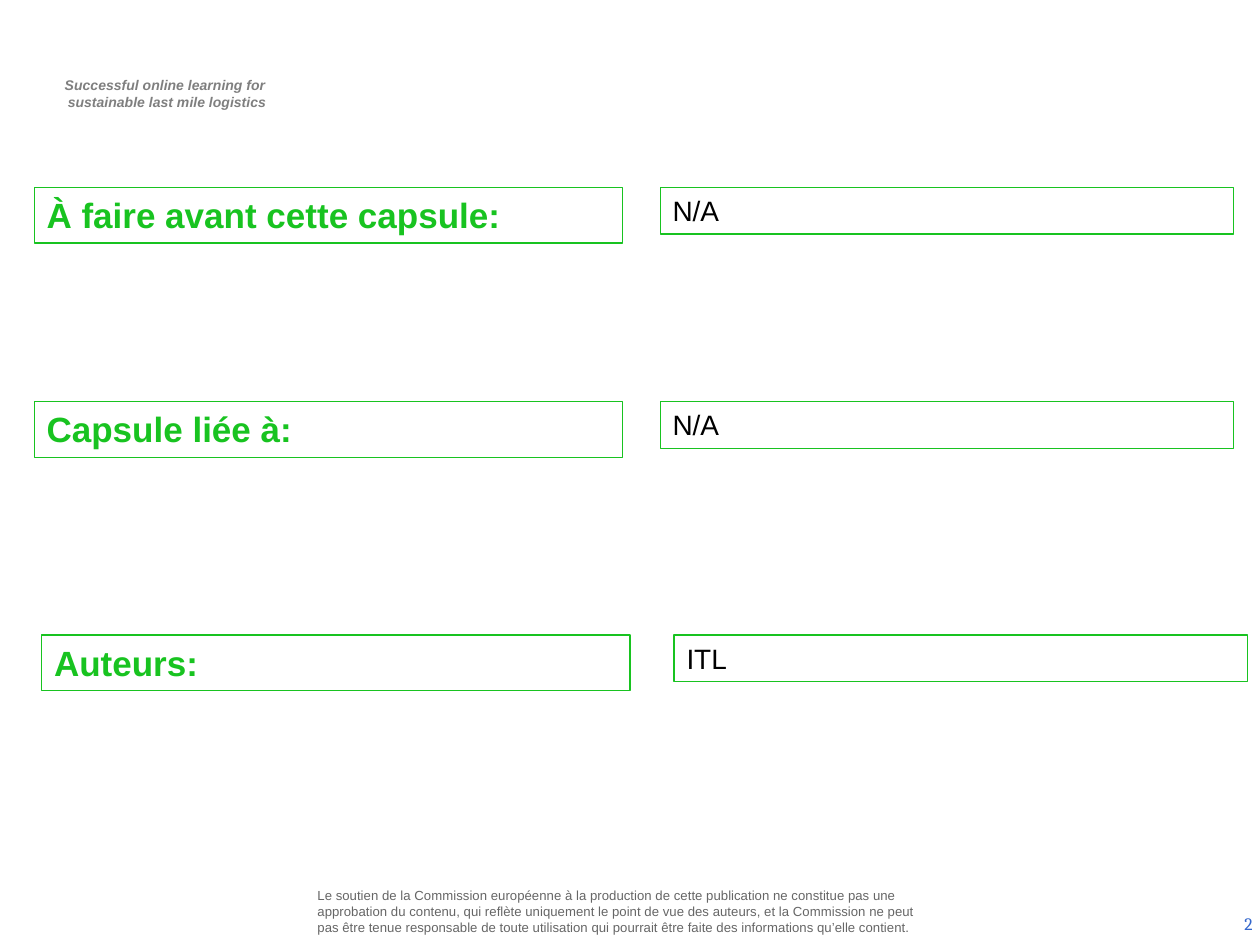
from dataclasses import dataclass

from pptx import Presentation
from pptx.dml.color import RGBColor as Rgb
from pptx.enum.shapes import MSO_SHAPE as Shape
from pptx.enum.text import MSO_ANCHOR as Anchor, MSO_AUTO_SIZE as AutoSize, PP_ALIGN as Align
from pptx.util import Cm, Pt


@dataclass(frozen=True)
class Theme:
    """Colours, fonts and type sizes of the deck."""
    green: str = "18C320"
    white: str = "FFFFFF"
    black: str = "000000"
    slogan_grey: str = "7F7F7F"
    notice_grey: str = "666666"
    number_blue: str = "3366CC"
    sans: str = "Arial"
    serif: str = "Cambria"
    label_size: float = 20
    answer_size: float = 16
    number_size: float = 10
    slogan_size: float = 8
    notice_size: float = 7.5
    border: float = 0.75


THEME = Theme()
SLOGAN = "Successful online learning for \nsustainable last mile logistics"
NOTICE = (
    "Le soutien de la Commission européenne à la production de cette publication "
    "ne constitue pas une approbation du contenu, qui reflète uniquement le point "
    "de vue des auteurs, et la Commission ne peut pas être tenue responsable de "
    "toute utilisation qui pourrait être faite des informations qu’elle contient."
)
ROWS = [
    ("À faire avant cette capsule:", "N/A", (0.69, 3.78, 24.18, 1.12)),
    ("Capsule liée à:", "N/A", (0.69, 8.1, 24.18, 1.12)),
    ("Auteurs:", "ITL", (0.84, 12.8, 24.31, 1.12)),
]
LABEL_WIDTH, ANSWER_WIDTH, ANSWER_HEIGHT = 11.86, 11.56, 0.94


def write(shape, text, size, color, font=THEME.sans, bold=False, italic=False,
          align=Align.LEFT, anchor=Anchor.TOP):
    """Put formatted, wrapped text into a shape and return its frame."""
    frame = shape.text_frame
    frame.text = text
    frame.word_wrap = True
    frame.vertical_anchor = anchor
    for para in frame.paragraphs:
        para.alignment = align
        for span in para.runs:
            span.font.name = font
            span.font.size = Pt(size)
            span.font.bold = bold
            span.font.italic = italic
            span.font.color.rgb = Rgb.from_string(color)
    return frame


def add_text(page, box, text, size, color, **style):
    """Add a text box and return its frame."""
    return write(page.shapes.add_textbox(*map(Cm, box)), text, size, color, **style)


def add_framed(page, box, text, size, color, bold=False):
    """Add a white, green-bordered rectangle with text."""
    shape = page.shapes.add_shape(Shape.RECTANGLE, *map(Cm, box))
    shape.shadow.inherit = False
    shape.fill.solid()
    shape.fill.fore_color.rgb = Rgb.from_string(THEME.white)
    shape.line.color.rgb = Rgb.from_string(THEME.green)
    shape.line.width = Pt(THEME.border)
    frame = write(shape, text, size, color, bold=bold)
    frame.auto_size = AutoSize.SHAPE_TO_FIT_TEXT


def add_row(page, box, label, answer):
    """Place a label at the left and its answer at the right of the box."""
    left, top, width, height = box
    answer_left = left + width - ANSWER_WIDTH
    add_framed(page, (left, top, LABEL_WIDTH, height), label,
               THEME.label_size, THEME.green, bold=True)
    add_framed(page, (answer_left, top, ANSWER_WIDTH, ANSWER_HEIGHT), answer,
               THEME.answer_size, THEME.black)


def add_slogan(page, box):
    """Place the project slogan with its small left indent."""
    frame = add_text(page, box, SLOGAN, THEME.slogan_size, THEME.slogan_grey,
                     bold=True, italic=True, align=Align.CENTER)
    for para in frame.paragraphs:
        para._p.get_or_add_pPr().set("marL", str(Cm(0.1)))


def add_footer(page, box, number):
    """Place the funding notice and the page number within the box."""
    left, top, width, height = box
    notice = add_text(page, (left, top, 12.52, 1.02), NOTICE, THEME.notice_size,
                      THEME.notice_grey, anchor=Anchor.MIDDLE)
    notice.margin_left = notice.margin_right = Cm(0.1)
    notice.margin_top = notice.margin_bottom = Cm(0.1)
    add_text(page, (left + width - 5.92, top + height - 1.02, 5.92, 1.02), number,
             THEME.number_size, THEME.number_blue, font=THEME.serif,
             align=Align.RIGHT, anchor=Anchor.MIDDLE)


def main():
    """Build and save the slide."""
    deck = Presentation()
    deck.slide_width, deck.slide_height = Cm(25.4), Cm(19.05)
    page = deck.slides.add_slide(deck.slide_layouts[6])
    add_slogan(page, (0.74, 1.42, 5.16, 0.94))
    add_footer(page, (6.3, 17.86, 19.2, 1.27), "2")
    for label, answer, box in ROWS:
        add_row(page, box, label, answer)
    deck.save("out.pptx")


if __name__ == "__main__":
    main()
